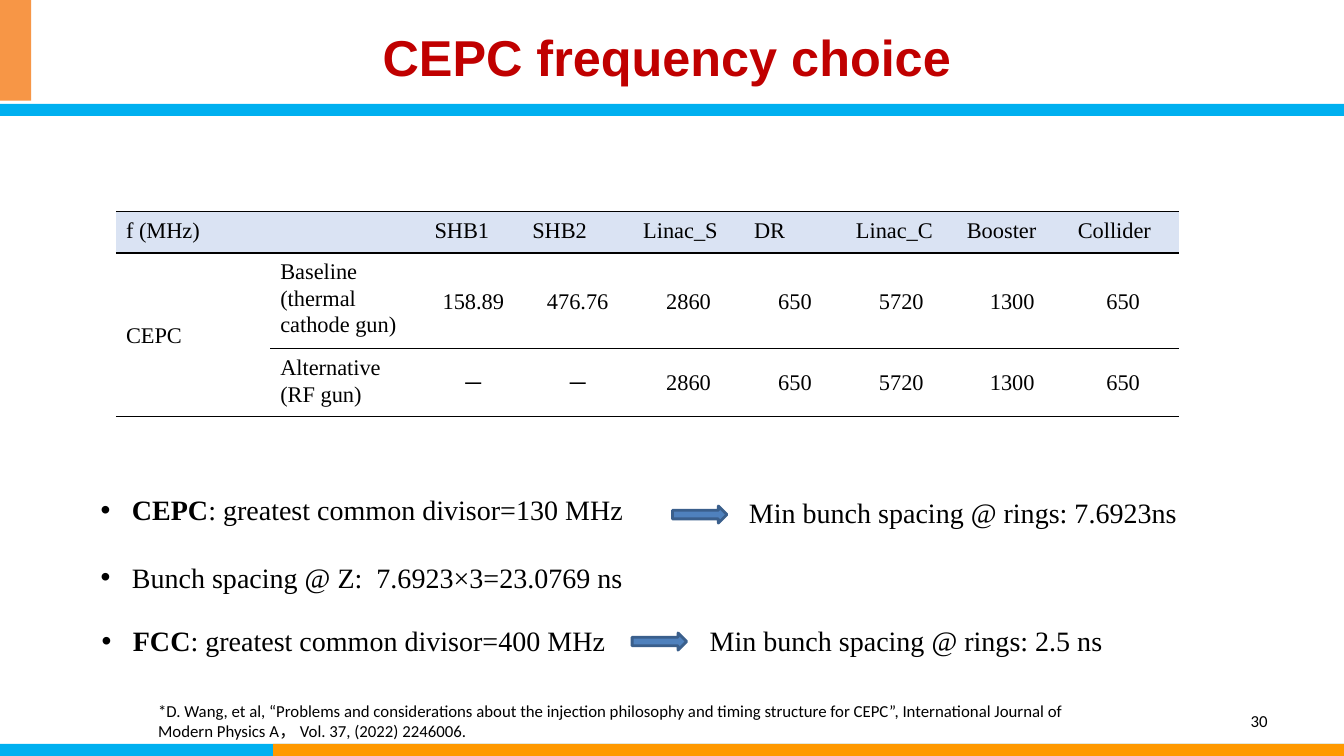
from typing import NamedTuple

from lxml.etree import SubElement
from pptx import Presentation
from pptx.dml.color import RGBColor
from pptx.enum.shapes import MSO_SHAPE as Preset
from pptx.enum.text import MSO_ANCHOR as Anchor, PP_ALIGN as Align
from pptx.oxml.ns import qn
from pptx.util import Inches, Pt

SERIF = "Times New Roman"
BLACK = "000000"
HEADER_FILL = "DAE3F3"


class Box(NamedTuple):
    left: float
    top: float
    width: float
    height: float


class Bar(NamedTuple):
    box: Box
    color: str


class Statement(NamedTuple):
    box: Box
    lead: str
    rest: str
    bulleted: bool


class Note(NamedTuple):
    box: Box
    text: str
    align: Align
    anchor: Anchor


BARS = [
    Bar(Box(0, 7.38, 13.33, 0.12), "00B0F0"),
    Bar(Box(2.71, 7.38, 10.63, 0.12), "FF9900"),
    Bar(Box(0, 1.03, 13.33, 0.12), "00B0F0"),
    Bar(Box(0, 0, 0.31, 1), "F79646"),
]
STATEMENTS = [
    Statement(Box(0.9, 4.84, 5.79, 0.44), "CEPC", ": greatest common divisor=130 MHz", True),
    Statement(Box(7.33, 4.87, 4.63, 0.44), "", "Min bunch spacing @ rings: 7.6923ns", False),
    Statement(Box(0.9, 5.51, 7.96, 0.44), "", "Bunch spacing @ Z:  7.6923×3=23.0769 ns", True),
    Statement(Box(0.91, 6.14, 5.79, 0.44), "FCC", ": greatest common divisor=400 MHz", True),
    Statement(Box(6.94, 6.14, 4.63, 0.44), "", "Min bunch spacing @ rings: 2.5 ns", False),
]
ARROWS = [Box(6.67, 5.02, 0.54, 0.17), Box(6.27, 6.28, 0.54, 0.17)]
NOTES = [
    Note(Box(9.56, 6.95, 3.11, 0.4), "30", Align.RIGHT, Anchor.MIDDLE),
    Note(
        Box(1.47, 6.9, 9.76, 0.5),
        "*D. Wang, et al, “Problems and considerations about the injection philosophy and "
        "timing structure for CEPC”, International Journal of Modern Physics A， "
        "Vol. 37, (2022) 2246006.",
        Align.LEFT,
        Anchor.TOP,
    ),
]
FREQUENCIES = [
    ["f (MHz)", "", "SHB1", "SHB2", "Linac_S", "DR", "Linac_C", "Booster", "Collider"],
    ["CEPC", "Baseline (thermal cathode gun)", "158.89", "476.76",
     "2860", "650", "5720", "1300", "650"],
    ["", "Alternative (RF gun)", "─", "─", "2860", "650", "5720", "1300", "650"],
]
TABLE_BOX = Box(1.15, 2.1, 10.55, 2.03)
COLUMN_WIDTHS = [1.53, 1.53, 0.97, 1.1, 1.1, 1.01, 1.1, 1.1, 1.1]
ROW_HEIGHTS = [0.41, 0.95, 0.67]


def rgb(color: str) -> RGBColor:
    return RGBColor.from_string(color)


def inches(box: Box) -> list:
    return [Inches(length) for length in box]


def style_font(font, name: str, size: float, color: str = BLACK, bold: bool = False) -> None:
    font.name, font.size, font.bold = name, Pt(size), bold
    font.color.rgb = rgb(color)


def add_preset(slide, preset, box: Box, color: str):
    shape = slide.shapes.add_shape(preset, *inches(box))
    shape.shadow.inherit = False
    shape.fill.solid()
    shape.fill.fore_color.rgb = rgb(color)
    shape.line.fill.background()
    return shape


def add_arrow(slide, box: Box) -> None:
    arrow = add_preset(slide, Preset.RIGHT_ARROW, box, "4F81BD")
    arrow.line.color.rgb = rgb("3A5F8C")
    arrow.line.width = Pt(2)


def add_frame(slide, box: Box):
    frame = slide.shapes.add_textbox(*inches(box)).text_frame
    frame.word_wrap = True
    return frame


def add_bullet(paragraph) -> None:
    properties = paragraph._p.get_or_add_pPr()
    properties.set("marL", str(Inches(0.31)))
    properties.set("indent", str(Inches(-0.31)))
    SubElement(properties, qn("a:buFont")).set("typeface", "Arial")
    SubElement(properties, qn("a:buChar")).set("char", "•")


def add_statement(slide, statement: Statement) -> None:
    paragraph = add_frame(slide, statement.box).paragraphs[0]
    if statement.bulleted:
        add_bullet(paragraph)
    for words, bold in ((statement.lead, True), (statement.rest, False)):
        if words:
            run = paragraph.add_run()
            run.text = words
            style_font(run.font, SERIF, 20, bold=bold)


def add_note(slide, note: Note) -> None:
    frame = add_frame(slide, note.box)
    frame.text = note.text
    frame.vertical_anchor = note.anchor
    frame.paragraphs[0].alignment = note.align
    style_font(frame.paragraphs[0].runs[0].font, "Calibri", 12)


def rule_cell(cell, has_top: bool) -> None:
    properties = cell._tc.get_or_add_tcPr()
    for side, ruled in (("L", False), ("R", False), ("T", has_top), ("B", True)):
        border = SubElement(properties, qn(f"a:ln{side}"))
        border.set("w", str(Pt(1)))
        if ruled:
            fill = SubElement(border, qn("a:solidFill"))
            SubElement(fill, qn("a:srgbClr")).set("val", BLACK)
        else:
            SubElement(border, qn("a:noFill"))


def fill_cell(cell, text: str, row: int, column: int) -> None:
    rule_cell(cell, has_top=not (row == 2 and column == 0))
    if row == 0:
        cell.fill.solid()
        cell.fill.fore_color.rgb = rgb(HEADER_FILL)
    else:
        cell.fill.background()
    cell.vertical_anchor = Anchor.TOP if row == 0 or column == 1 else Anchor.MIDDLE
    cell.text = text
    paragraph = cell.text_frame.paragraphs[0]
    paragraph.line_spacing = 1.07
    paragraph.space_after = Pt(8)
    paragraph.alignment = Align.CENTER if row > 0 and column > 1 else Align.LEFT
    style_font(paragraph.font, SERIF, 16)
    for run in paragraph.runs:
        style_font(run.font, SERIF, 16)


def add_frequency_table(slide) -> None:
    table = slide.shapes.add_table(
        len(ROW_HEIGHTS), len(COLUMN_WIDTHS), *inches(TABLE_BOX)
    ).table
    table.first_row = table.horz_banding = False
    for column, width in zip(table.columns, COLUMN_WIDTHS):
        column.width = Inches(width)
    for row, height in zip(table.rows, ROW_HEIGHTS):
        row.height = Inches(height)
    for r, values in enumerate(FREQUENCIES):
        for c, value in enumerate(values):
            fill_cell(table.cell(r, c), value, r, c)
    table.cell(1, 0).merge(table.cell(2, 0))


def main() -> None:
    deck = Presentation()
    deck.slide_width, deck.slide_height = Inches(13.33), Inches(7.5)
    slide = deck.slides.add_slide(deck.slide_layouts[5])
    for bar in BARS:
        add_preset(slide, Preset.RECTANGLE, bar.box, bar.color)
    title = slide.shapes.title
    title.left, title.top, title.width, title.height = inches(Box(0.73, 0.16, 11.77, 0.79))
    title.text_frame.text = "CEPC frequency choice"
    title.text_frame.vertical_anchor = Anchor.MIDDLE
    heading = title.text_frame.paragraphs[0]
    heading.alignment = Align.CENTER
    style_font(heading.runs[0].font, "Arial", 36, "C00000", bold=True)
    add_frequency_table(slide)
    for statement in STATEMENTS:
        add_statement(slide, statement)
    for arrow in ARROWS:
        add_arrow(slide, arrow)
    for note in NOTES:
        add_note(slide, note)
    deck.save("out.pptx")


if __name__ == "__main__":
    main()
